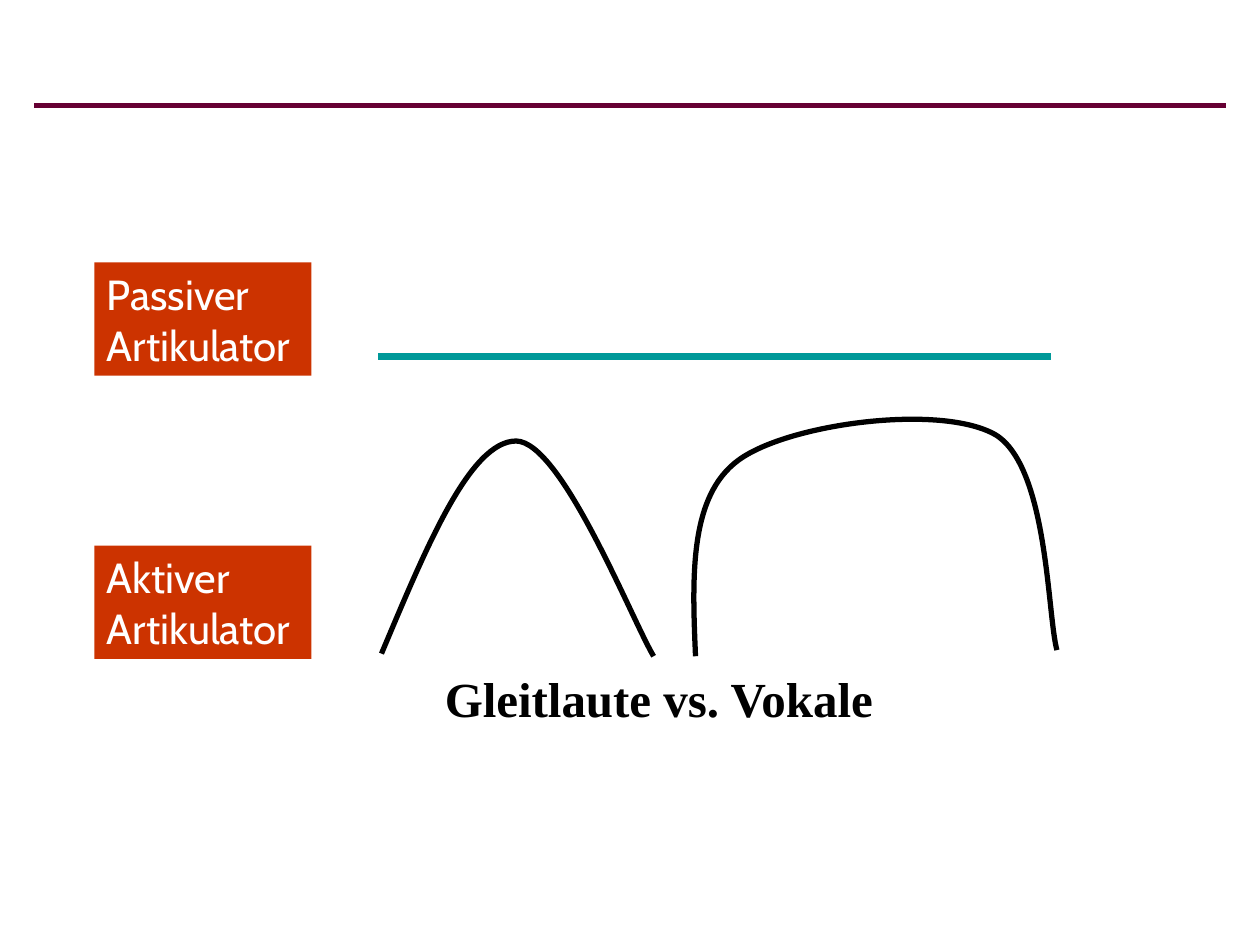
from dataclasses import dataclass

from lxml.etree import SubElement
from pptx import Presentation
from pptx.dml.color import RGBColor as Rgb
from pptx.enum.shapes import MSO_CONNECTOR as Connector, MSO_SHAPE as Shape
from pptx.enum.text import MSO_ANCHOR as Anchor, PP_ALIGN as Align
from pptx.oxml.ns import qn
from pptx.util import Pt

Point = tuple[float, float]


@dataclass(frozen=True)
class Theme:
    rule: Rgb = Rgb(0x66, 0x00, 0x33)
    label_fill: Rgb = Rgb(0xCC, 0x33, 0x00)
    label_text: Rgb = Rgb(0xFF, 0xFF, 0xFF)
    passive: Rgb = Rgb(0x00, 0x99, 0x99)
    ink: Rgb = Rgb(0x00, 0x00, 0x00)
    label_font: str = "Cabin"
    caption_font: str = "Times New Roman"
    label_size: float = 24
    caption_size: float = 28


@dataclass(frozen=True)
class Label:
    text: str
    top: float


@dataclass(frozen=True)
class Rule:
    left: float
    right: float
    y: float
    color: Rgb
    weight: float


THEME = Theme()
RULES = (
    Rule(19.5, 700.5, 60.5, THEME.rule, 3),
    Rule(216, 600.5, 203.75, THEME.passive, 4.5),
)
LABELS = (Label("Aktiver\vArtikulator", 311.75), Label("Passiver\vArtikulator", 150))
GLIDE_TONGUE = (
    (218, 373.5),
    (243.5, 313), (268.5, 252), (295, 252),
    (321, 252.5), (361, 354), (373.5, 375),
)
VOWEL_TONGUE = (
    (397.5, 375),
    (395.5, 329), (394, 283.5), (422, 263),
    (450.5, 242), (538, 230.5), (569, 248.5),
    (599, 267), (598.5, 351.5), (604, 371.5),
)


def write(frame, text: str, color: Rgb, **font_format) -> None:
    paragraph = frame.paragraphs[0]
    paragraph.text = text
    for run in paragraph.runs:
        for attribute, value in font_format.items():
            setattr(run.font, attribute, value)
        run.font.color.rgb = color


def draw_rule(shapes, rule: Rule) -> None:
    line = shapes.add_connector(
        Connector.STRAIGHT, Pt(rule.left), Pt(rule.y), Pt(rule.right), Pt(rule.y)
    )
    line.line.color.rgb = rule.color
    line.line.width = Pt(rule.weight)
    SubElement(line._element.spPr, qn("a:effectLst"))


def draw_label(shapes, label: Label) -> None:
    box = shapes.add_shape(Shape.RECTANGLE, Pt(54), Pt(label.top), Pt(124), Pt(64.75))
    box.shadow.inherit = False
    box.fill.solid()
    box.fill.fore_color.rgb = THEME.label_fill
    box.line.fill.background()
    frame = box.text_frame
    frame.word_wrap = True
    frame.vertical_anchor = Anchor.TOP
    write(frame, label.text, THEME.label_text,
          name=THEME.label_font, size=Pt(THEME.label_size))
    frame.paragraphs[0].alignment = Align.LEFT


def draw_curve(shapes, controls: tuple[Point, ...]) -> None:
    """Draw cubic Béziers: a start point, then three control points a segment."""
    start, *rest = [(Pt(x), Pt(y)) for x, y in controls]
    builder = shapes.build_freeform(*start)
    builder.add_line_segments(rest, close=False)
    curve = builder.convert_to_shape()
    outline = curve._element.spPr.find(".//" + qn("a:path"))
    legs = outline.findall(qn("a:lnTo"))
    for first in range(0, len(legs), 3):
        bezier = SubElement(outline, qn("a:cubicBezTo"))
        for leg in legs[first:first + 3]:
            bezier.append(leg[0])
            outline.remove(leg)
    curve.shadow.inherit = False
    curve.fill.background()
    curve.line.color.rgb = THEME.ink
    curve.line.width = Pt(3)


def draw_caption(shapes, text: str) -> None:
    frame = shapes.add_textbox(Pt(245), Pt(378.5), Pt(263), Pt(41)).text_frame
    frame.word_wrap = False
    write(frame, text, THEME.ink, name=THEME.caption_font,
          size=Pt(THEME.caption_size), bold=True)
    frame.paragraphs[0].alignment = Align.CENTER


def main() -> None:
    deck = Presentation()
    deck.slide_width, deck.slide_height = Pt(720), Pt(540)
    shapes = deck.slides.add_slide(deck.slide_layouts[6]).shapes
    for rule in RULES:
        draw_rule(shapes, rule)
    for label in LABELS:
        draw_label(shapes, label)
    draw_caption(shapes, "Gleitlaute vs. Vokale")
    for controls in (GLIDE_TONGUE, VOWEL_TONGUE):
        draw_curve(shapes, controls)
    deck.save("out.pptx")


if __name__ == "__main__":
    main()
